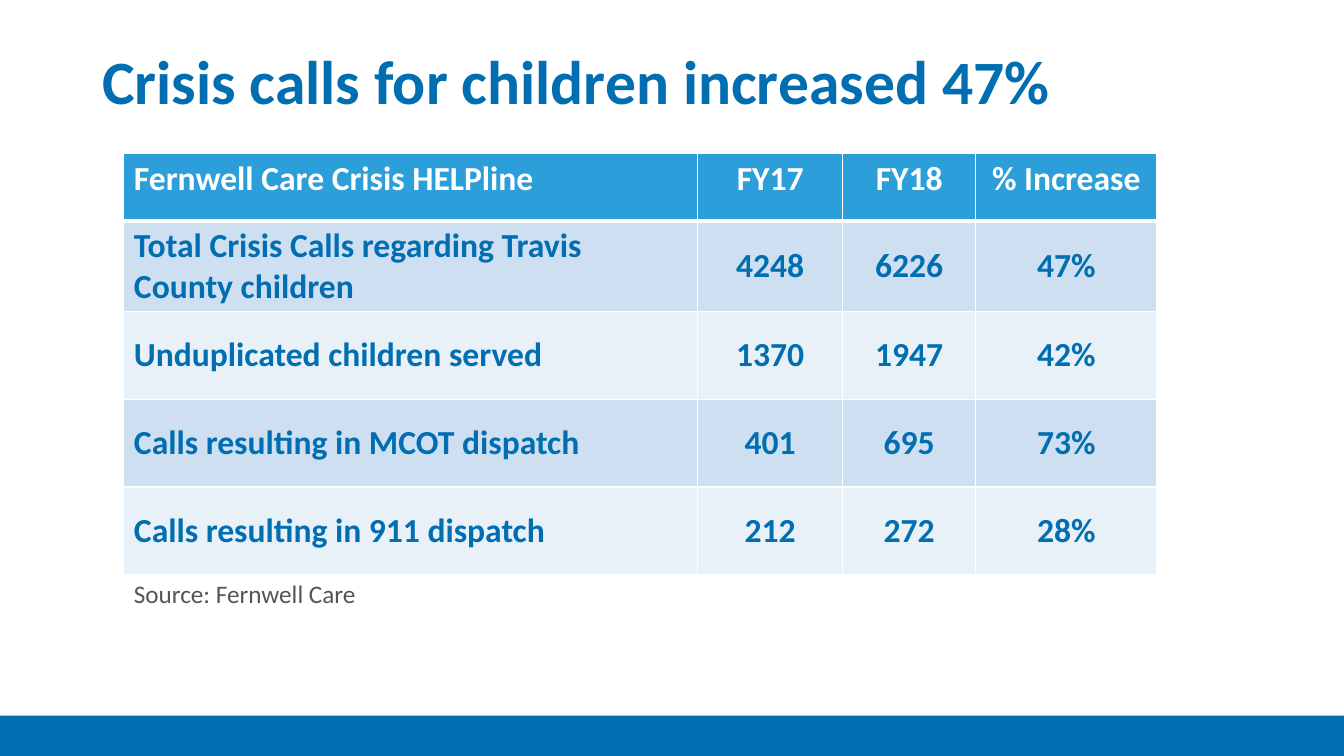
"""Build the slide on crisis calls for children."""
from lxml.etree import SubElement
from pptx import Presentation
from pptx.dml.color import RGBColor
from pptx.enum.shapes import MSO_SHAPE as Shape
from pptx.enum.text import MSO_ANCHOR as Anchor, PP_ALIGN as Align
from pptx.oxml.ns import qn
from pptx.util import Inches, Pt

COLORS = {"blue": "016EB1", "header": "2C9ED9", "band": "CDDFF1",
          "pale": "E8F0F8", "white": "FFFFFF", "gray": "535556"}

deck = Presentation()
deck.slide_width, deck.slide_height = Inches(13.33), Inches(7.5)
page = deck.slides.add_slide(deck.slide_layouts[6])
COLUMN, ROW = deck.slide_width / 160, deck.slide_height / 90


def grid(left, top, width, height):
    return [round(left * COLUMN), round(top * ROW),
            round(width * COLUMN), round(height * ROW)]


def write(frame, text, size, color, bold=True, align=Align.LEFT):
    frame.word_wrap = True
    para = frame.paragraphs[0]
    para.alignment = align
    span = para.add_run()
    span.text = text
    span.font.name, span.font.size, span.font.bold = "Calibri", Pt(size), bold
    span.font.color.rgb = RGBColor.from_string(COLORS[color])
    return para


footer = page.shapes.add_shape(Shape.RECTANGLE, *grid(0, 85.2, 160, 4.8))
footer.shadow.inherit = False
footer.fill.solid()
footer.fill.fore_color.rgb = RGBColor.from_string(COLORS["blue"])
footer.line.fill.background()

title = page.shapes.add_textbox(*grid(11, 4.8, 138, 10.44)).text_frame
title.vertical_anchor = Anchor.MIDDLE
write(title, "Crisis calls for children increased 47%", 44, "blue").line_spacing = 0.9

records = [
    ("Fernwell Care Crisis HELPline", "FY17", "FY18", "% Increase"),
    ("Total Crisis Calls regarding Travis County children", "4248", "6226", "47%"),
    ("Unduplicated children served", "1370", "1947", "42%"),
    ("Calls resulting in MCOT dispatch", "401", "695", "73%"),
    ("Calls resulting in 911 dispatch", "212", "272", "28%"),
]
widths = [68.3, 17.3, 15.8, 21.6]
heights = [8] + [10.44] * 4
table = page.shapes.add_table(
    len(records), len(widths), *grid(14.75, 18.3, sum(widths), sum(heights))).table
for column, width in zip(table.columns, widths):
    column.width = round(width * COLUMN)
for row, height in zip(table.rows, heights):
    row.height = round(height * ROW)

for row, record in enumerate(records):
    fill = "header" if row == 0 else ("pale", "band")[row % 2]
    for column, text in enumerate(record):
        cell = table.cell(row, column)
        cell.vertical_anchor = Anchor.MIDDLE if row else Anchor.TOP
        write(cell.text_frame, text, 24, "blue" if row else "white",
              align=Align.CENTER if column else Align.LEFT)
        properties = cell._tc.get_or_add_tcPr()
        for side in ("lnL", "lnR", "lnT", "lnB"):
            thick = (row, side) in [(0, "lnB"), (1, "lnT")]
            border = SubElement(properties, qn(f"a:{side}"), w=str(Pt(3 if thick else 1)))
            paint = SubElement(border, qn("a:solidFill"))
            SubElement(paint, qn("a:srgbClr"), val=COLORS["white"])
        cell.fill.solid()
        cell.fill.fore_color.rgb = RGBColor.from_string(COLORS[fill])

source = page.shapes.add_textbox(*grid(14.75, 68.2, 123, 12.1)).text_frame
write(source, "Source: Fernwell Care", 18, "gray", bold=False)

deck.save("out.pptx")
